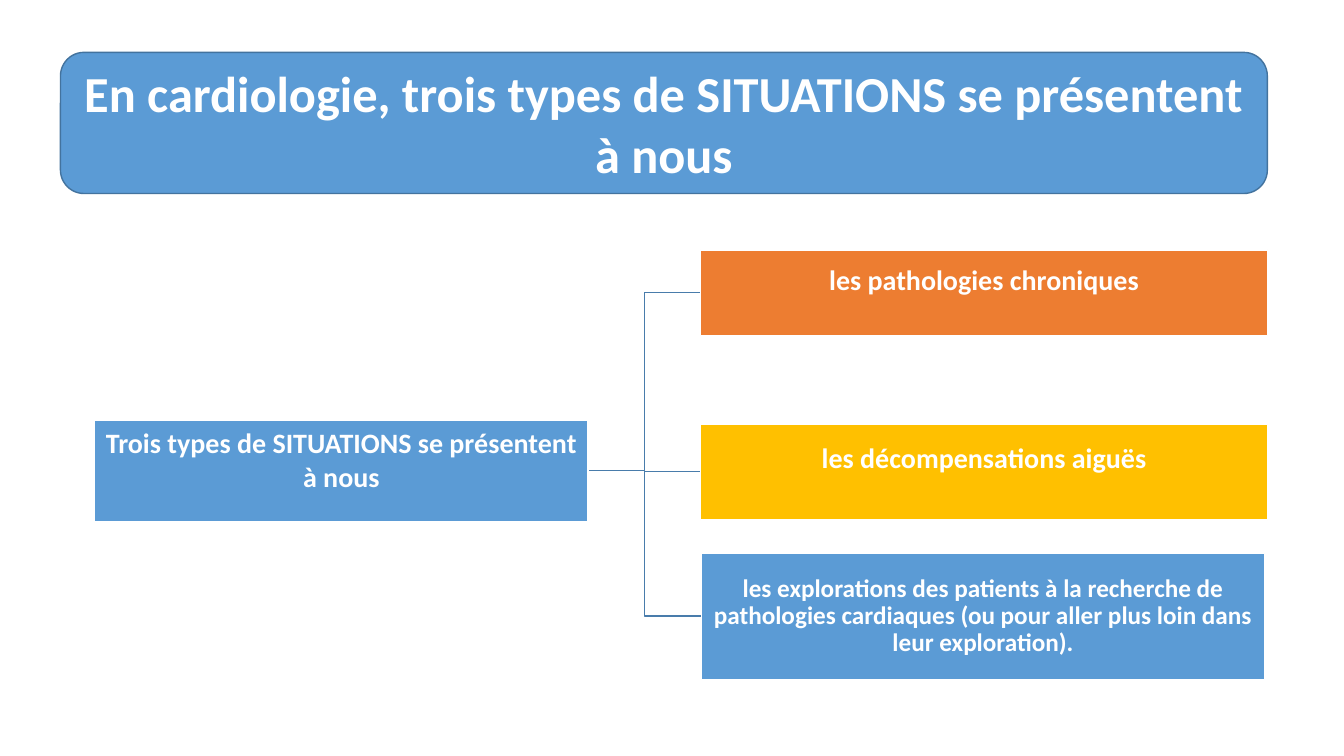
"""Build the slide on three types of situations in cardiology."""
from pptx import Presentation
from pptx import util as u
from pptx.dml.color import RGBColor
from pptx.enum import shapes, text

PX = 9144
COLORS = {"blue": "5B9BD5", "edge": "43739E", "link": "497CAB",
          "orange": "ED7D31", "gold": "FFC000", "white": "FFFFFF"}
ROOT = (94, 417, 489, 101)
LEAVES = [
    ((695, 248, 562, 85), "orange", "les pathologies chroniques", 20, 28, 1),
    ((695, 421, 562, 95), "gold", "les décompensations aiguës", 20, 31, 1),
    ((696, 549, 558, 125), "blue",
     "les explorations des patients à la recherche de pathologies cardiaques "
     "(ou pour aller plus loin dans leur exploration).", 18, 1, 0.9),
]


def rgb(name):
    """Return the named colour."""
    return RGBColor.from_string(COLORS[name])


def stroke(shape, color):
    """Give a shape a thin line and no shadow."""
    shape.shadow.inherit = False
    shape.line.color.rgb = rgb(color)
    shape.line.width = u.Pt(1)


def panel(slide, box, kind, fill, edge, words, size):
    """Draw a filled shape with centred bold text in the box."""
    shape = slide.shapes.add_shape(kind, *(n * PX for n in box))
    shape.fill.solid()
    shape.fill.fore_color.rgb = rgb(fill)
    stroke(shape, edge)
    frame = shape.text_frame
    frame.word_wrap = True
    frame.vertical_anchor = text.MSO_ANCHOR.MIDDLE
    frame.text = words
    para = frame.paragraphs[0]
    para.alignment = text.PP_ALIGN.CENTER
    font = para.runs[0].font
    font.name, font.size, font.bold = "Calibri", u.Pt(size), True
    font.color.rgb = rgb("white")
    return frame


def header(slide, box):
    """Draw the rounded title banner in the box."""
    panel(slide, box, shapes.MSO_SHAPE.ROUNDED_RECTANGLE, "blue", "edge",
          "En cardiologie, trois types de SITUATIONS se présentent à nous", 36)


def node(slide, box, fill, words, size, foot, lead):
    """Draw one box of the tree, its text raised by the foot inset."""
    frame = panel(slide, box, shapes.MSO_SHAPE.RECTANGLE, fill, "white",
                  words, size)
    frame.margin_left = frame.margin_right = frame.margin_top = PX
    frame.margin_bottom = foot * PX
    frame.paragraphs[0].line_spacing = lead


def link(slide, start, end):
    """Draw an elbow line from the root box to a leaf box."""
    left = start[0] + start[2]
    top = start[1] + start[3] // 2
    right, low = end[0], end[1] + end[3] // 2
    mid = (left + right) // 2
    pen = slide.shapes.build_freeform(left, top, scale=PX)
    pen.add_line_segments([(mid, top), (mid, low), (right, low)], close=False)
    line = pen.convert_to_shape()
    line.fill.background()
    stroke(line, "link")


def tree(slide, root, leaves):
    """Draw the root box, the leaf boxes and the links between them."""
    for leaf in reversed(leaves):
        link(slide, root, leaf[0])
    node(slide, root, "blue",
         "Trois types de SITUATIONS se présentent à nous", 20, 25, 1)
    for leaf in leaves:
        node(slide, *leaf)


def main():
    """Build and save the deck."""
    deck = Presentation()
    deck.slide_width, deck.slide_height = 1333 * PX, 750 * PX
    slide = deck.slides.add_slide(deck.slide_layouts[6])
    header(slide, (60, 52, 1197, 140))
    tree(slide, ROOT, LEAVES)
    deck.save("out.pptx")


if __name__ == "__main__":
    main()
